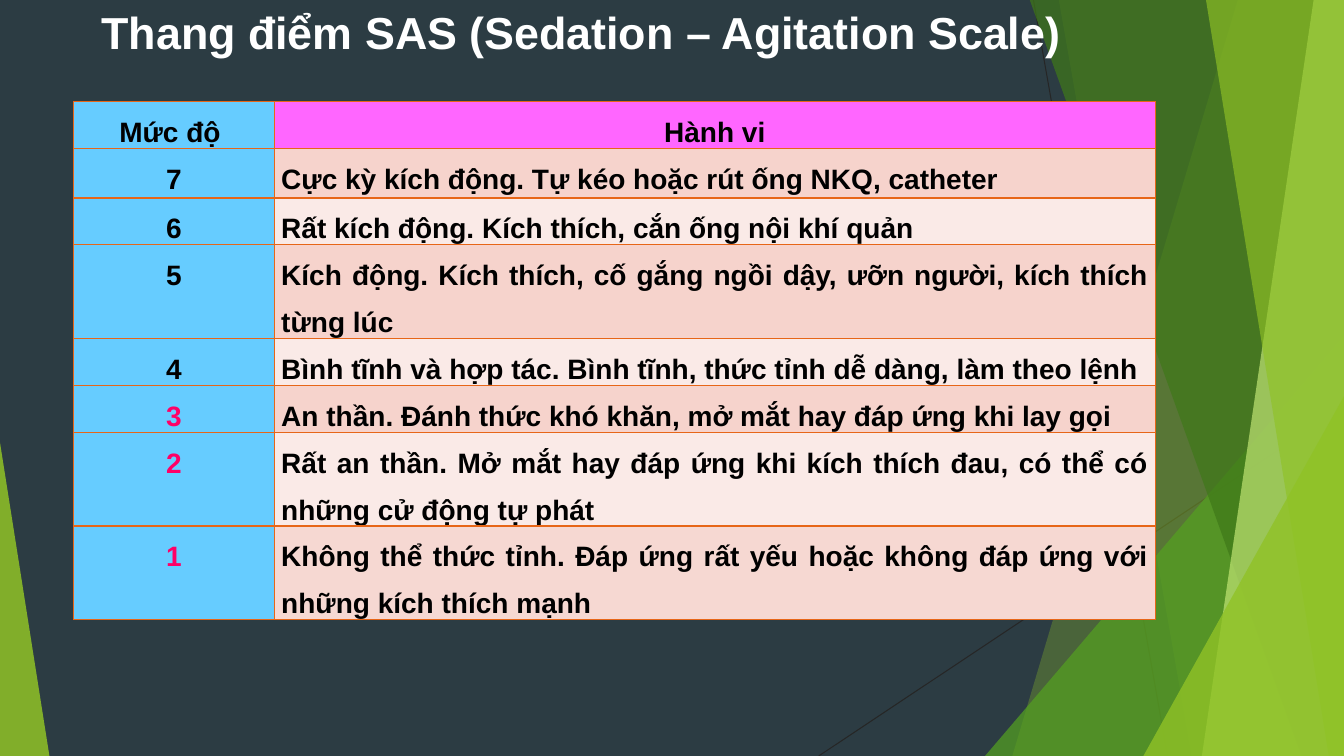
from pptx import Presentation, util as u
from pptx.dml.color import RGBColor
from pptx.enum import shapes, text
from pptx.oxml import parse_xml
from pptx.oxml.ns import nsdecls
from lxml import etree

INK = {
    "back": "2C3C43", "line": "262626", "lime": "90C226", "green": "54A021",
    "dark": "3F7819", "pale": "C0E474", "white": "FFFFFF", "black": "000000",
    "blue": "66CCFF", "pink": "FF66FF", "red": "FF0066", "edge": "E76618",
    "rose": "F6D3CC", "light": "FAEAE7", "last": "F6D8D2",
}
WIDE, HIGH = 13.33, 7.5


def paint(fill, ink, alpha=100):
    fill.solid()
    fill.fore_color.rgb = RGBColor.from_string(INK[ink])
    if alpha < 100:
        tint = fill.fore_color._xFill[0]
        etree.SubElement(tint, tint.tag.replace("srgbClr", "alpha"), val=str(alpha * 1000))


def write(frame, words, size, ink, align, space=None):
    frame.text = words
    para = frame.paragraphs[0]
    para.alignment = align
    if space:
        para.line_spacing = space
    font = para.runs[0].font
    for key, val in {"name": "Arial", "size": u.Pt(size), "bold": True}.items():
        setattr(font, key, val)
    font.color.rgb = RGBColor.from_string(INK[ink])


deck = Presentation()
deck.slide_width, deck.slide_height = u.Inches(WIDE), u.Inches(HIGH)
slide = deck.slides.add_slide(deck.slide_layouts[5])
paint(slide.background.fill, "back")

# Thin lines behind the facets
for ends in [(10.25, 0, 11.58, HIGH), (WIDE, 4.03, 8.12, HIGH)]:
    line = slide.shapes.add_connector(shapes.MSO_CONNECTOR.STRAIGHT, *map(u.Inches, ends))
    line.line.width = u.Pt(0.75)
    line.line.color.rgb = RGBColor.from_string(INK["line"])
    line._element.spPr.append(parse_xml(f"<a:effectLst {nsdecls('a')}/>"))

# Facets: two numbers are the top and bottom of a slanted left edge,
# five are a triangle's box and the place of its tip
facets = [
    ((12.28, 10.04), "lime", 30),
    ((10.5, 11.82), "lime", 20),
    ((9.77, 3.33, 3.56, 4.17, 1), "green", 72),
    ((10.21, 12.91), "dark", 70),
    ((13.03, 11.92), "pale", 70),
    ((11.96, 13.18), "lime", 65),
    ((11.34, 3.93, 1.99, 3.57, 1), "lime", 80),
    ((0, 4.39, 0.49, 3.11, 0), "lime", 85),
]
for geo, ink, alpha in facets:
    if len(geo) == 2:
        top, base = geo
        path = slide.shapes.build_freeform(u.Inches(top), u.Inches(-0.01))
        spots = [(WIDE, -0.01), (WIDE, HIGH), (base, HIGH)]
        path.add_line_segments([(u.Inches(x), u.Inches(y)) for x, y in spots])
        facet = path.convert_to_shape()
    else:
        *box, tip = geo
        facet = slide.shapes.add_shape(shapes.MSO_SHAPE.ISOSCELES_TRIANGLE, *map(u.Inches, box))
        facet.adjustments[0] = tip
    facet.shadow.inherit = False
    facet.line.fill.background()
    paint(facet.fill, ink, alpha)

# Title, in front of the facets
title = slide.shapes.title
place = {"left": 0.8, "top": 0, "width": 9.94, "height": 0.8}
for key, val in place.items():
    setattr(title, key, u.Inches(val))
title.text_frame.vertical_anchor = text.MSO_ANCHOR.TOP
title.text_frame.word_wrap = True
write(title.text_frame, "Thang điểm SAS (Sedation – Agitation Scale)", 32, "white",
      text.PP_ALIGN.CENTER)
slide.shapes.element.append(title.element)

# Scale table: level, behaviour, row height
rows = [
    ("Mức độ ", "Hành vi", 0.43),
    ("7", "Cực kỳ kích động. Tự kéo hoặc rút ống NKQ, catheter", 0.49),
    ("6", "Rất kích động. Kích thích, cắn ống nội khí quản", 0.43),
    ("5", "Kích động. Kích thích, cố gắng ngồi dậy, ưỡn người, kích thích từng lúc", 0.72),
    ("4", "Bình tĩnh và hợp tác. Bình tĩnh, thức tỉnh dễ dàng, làm theo lệnh", 0.43),
    ("3", "An thần. Đánh thức khó khăn, mở mắt hay đáp ứng khi lay gọi ", 0.42),
    ("2", "Rất an thần. Mở mắt hay đáp ứng khi kích thích đau, "
          "có thể có những cử động tự phát", 0.72),
    ("1", "Không thể thức tỉnh. Đáp ứng rất yếu hoặc không đáp ứng với "
          "những kích thích mạnh", 0.72),
]
end = len(rows) - 1
frame = slide.shapes.add_table(len(rows), 2, *map(u.Inches, (0.73, 1.01, 10.73, 5.5)))
table = frame.table
for col, width in zip(table.columns, (1.99, 8.74)):
    col.width = u.Inches(width)
inset = {"margin_left": 0.07, "margin_right": 0.07, "margin_top": 0, "margin_bottom": 0}

for r, (level, act, height) in enumerate(rows):
    table.rows[r].height = u.Inches(height)
    band = "pink" if r == 0 else "last" if r == end else "rose" if r % 2 else "light"
    for c, words in enumerate((level, act)):
        cell = table.cell(r, c)
        for key, val in inset.items():
            setattr(cell, key, u.Inches(val))
        align = text.PP_ALIGN.JUSTIFY if r and c else text.PP_ALIGN.CENTER
        ink = "red" if c == 0 and level in "321" else "black"
        write(cell.text_frame, words, 20, ink, align, 1.5)
        paint(cell.fill, band if c else "blue")
        # Borders, with a thicker rule above the last row
        for i, side in enumerate("LRTB"):
            thick = (r, side) in [(end - 1, "B"), (end, "T")]
            cell._tc.get_or_add_tcPr().insert(i, parse_xml(
                f'<a:ln{side} {nsdecls("a")} w="{u.Pt(2 if thick else 1)}"><a:solidFill>'
                f'<a:srgbClr val="{INK["edge"]}"/></a:solidFill></a:ln{side}>'))
frame.height = u.Inches(5.5)

deck.save("out.pptx")
